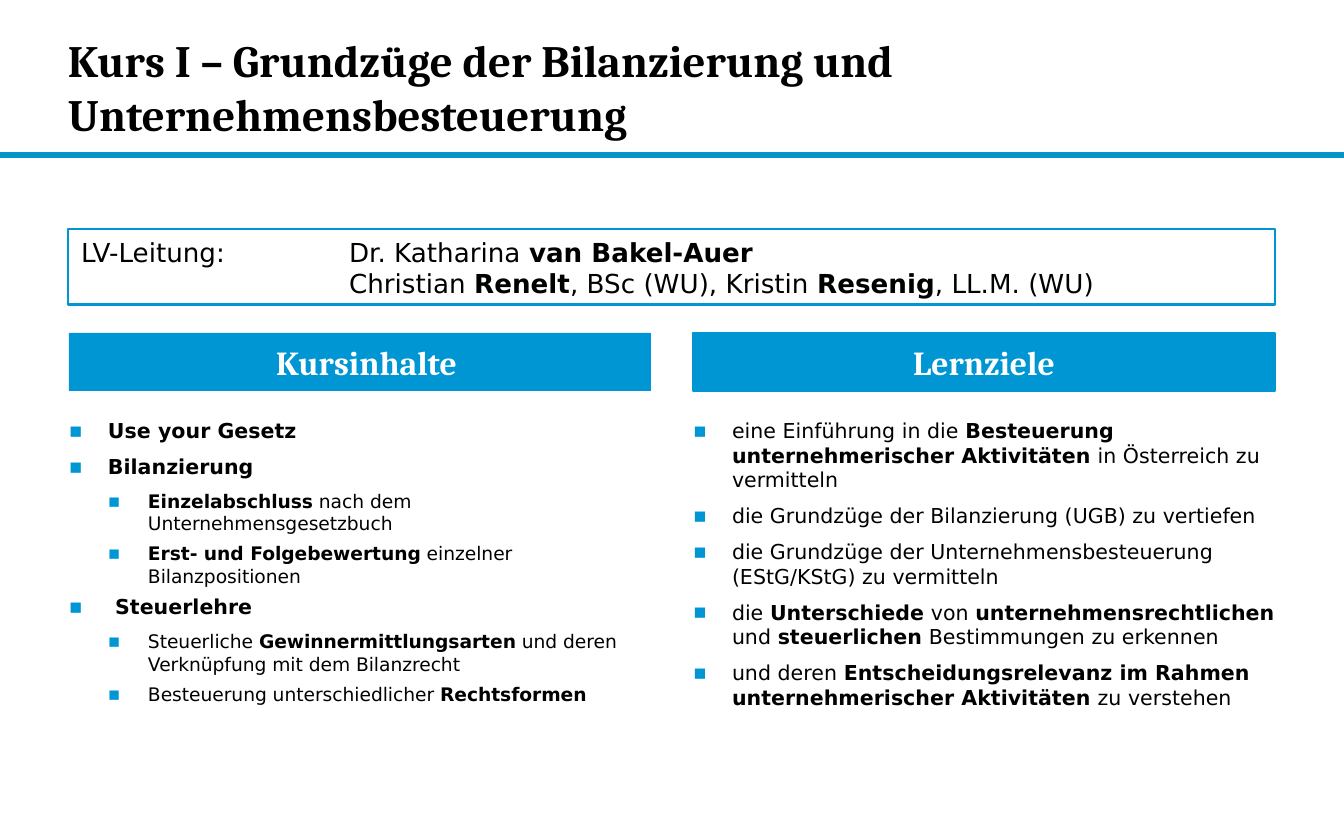
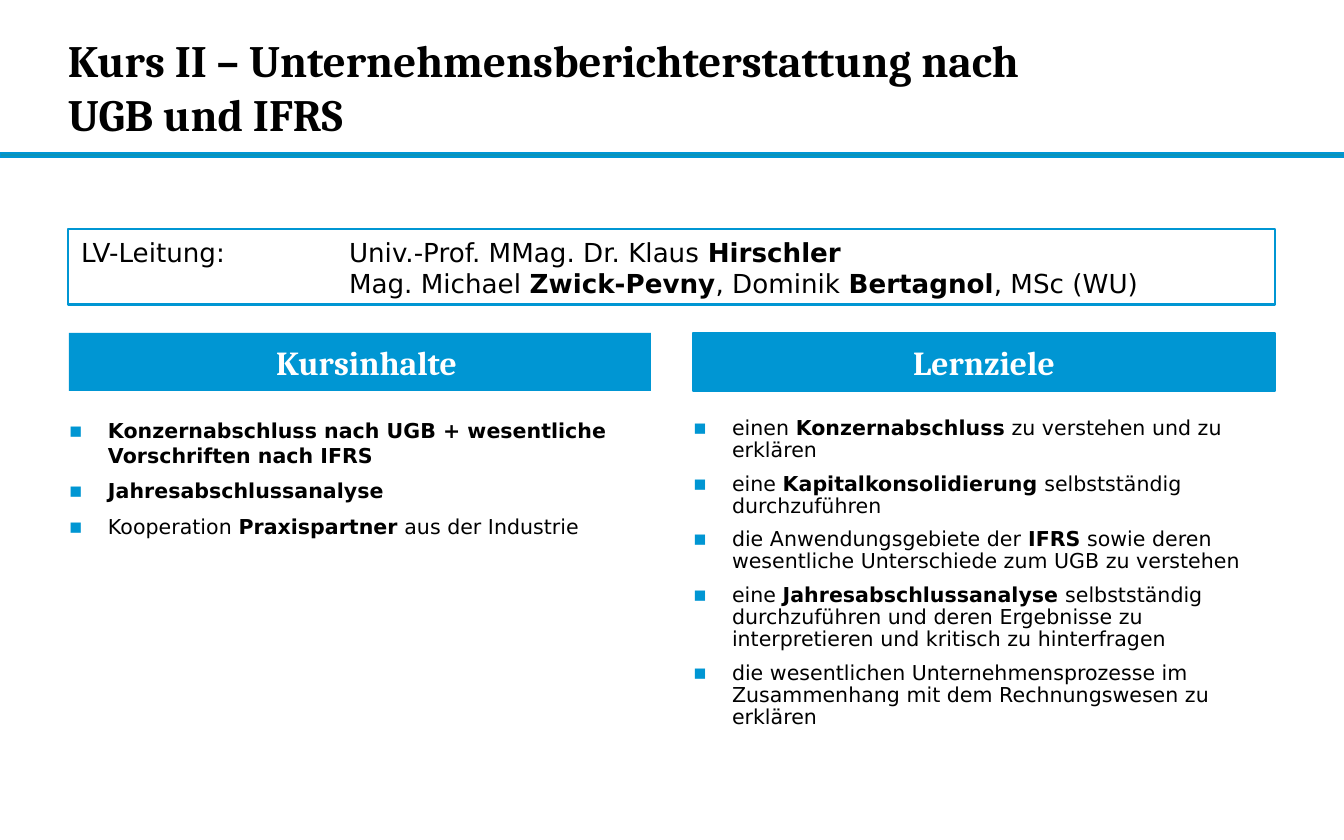
from dataclasses import dataclass

from lxml import etree
from pptx import Presentation
from pptx import util as u
from pptx.dml.color import RGBColor
from pptx.enum import shapes, text
from pptx.oxml.ns import qn

EMU_PER_PX = 914400 / 134.4


def px(length: int) -> u.Emu:
    return u.Emu(round(length * EMU_PER_PX))


@dataclass(frozen=True)
class Theme:
    accent: str = "0096D3"
    rule: str = "0C94B7"
    ink: str = "000000"
    paper: str = "FFFFFF"
    serif: str = "Cambria"
    sans: str = "DejaVu Sans"
    title_size: int = 24
    heading_size: int = 18
    staff_size: int = 14
    item_sizes: tuple[int, ...] = (11, 10)


THEME = Theme()


@dataclass(frozen=True)
class Area:
    left: int
    top: int
    width: int
    height: int

    def emu(self) -> tuple[u.Emu, ...]:
        return px(self.left), px(self.top), px(self.width), px(self.height)


PAGE = Area(0, 0, 1344, 840)
RULE = Area(0, 153, 1344, 4)
TITLE = Area(68, 20, 1006, 133)
STAFF = Area(68, 229, 1207, 76)
STAFF_NAMES_INDENT = 268
HEADING_TOP, HEADING_HEIGHT = 333, 58
LIST_TOP, LIST_HEIGHT = 411, 325
COLUMN_WIDTH = 582


@dataclass(frozen=True)
class Level:
    margin: int
    hanging: int
    space_after: int


LEVELS = (Level(39, 39, 6), Level(79, 40, 4))


@dataclass(frozen=True)
class Column:
    heading: str
    left: int
    heading_indent: int
    outline: float


CONTENTS = Column("Kursinhalte", 69, 13, 0)
GOALS = Column("Lernziele", 693, 0, 1)


@dataclass(frozen=True)
class Item:
    """A bullet; **double stars** enclose its bold words."""
    words: str
    level: int = 0


@dataclass(frozen=True)
class Course:
    title: str
    staff: tuple[str, str]
    contents: tuple[Item, ...]
    goals: tuple[Item, ...]
    goal_spacing: float = 1.0


COURSES = (
    Course(
        "Kurs I – Grundzüge der Bilanzierung und Unternehmensbesteuerung",
        ("Dr. Katharina **van Bakel-Auer**",
         "Christian **Renelt**, BSc (WU), Kristin **Resenig**, LL.M. (WU)"),
        (Item("**Use your Gesetz**"),
         Item("**Bilanzierung**"),
         Item("**Einzelabschluss** nach dem Unternehmensgesetzbuch", 1),
         Item("**Erst- und Folgebewertung** einzelner Bilanzpositionen", 1),
         Item("** Steuerlehre**"),
         Item("Steuerliche **Gewinnermittlungsarten** und deren "
              "Verknüpfung mit dem Bilanzrecht", 1),
         Item("Besteuerung unterschiedlicher **Rechtsformen**", 1)),
        (Item("eine Einführung in die **Besteuerung unternehmerischer "
              "Aktivitäten** in Österreich zu vermitteln"),
         Item("die Grundzüge der Bilanzierung (UGB) zu vertiefen"),
         Item("die Grundzüge der Unternehmensbesteuerung (EStG/KStG) "
              "zu vermitteln"),
         Item("die **Unterschiede** von **unternehmensrechtlichen** und "
              "**steuerlichen** Bestimmungen zu erkennen"),
         Item("und deren **Entscheidungsrelevanz im Rahmen "
              "unternehmerischer Aktivitäten** zu verstehen")),
    ),
    Course(
        "Kurs II – Unternehmensberichterstattung nach UGB und IFRS",
        ("Univ.-Prof. MMag. Dr. Klaus **Hirschler**",
         "Mag. Michael **Zwick-Pevny**, Dominik **Bertagnol**, MSc (WU)"),
        (Item("**Konzernabschluss nach UGB + wesentliche Vorschriften "
              "nach IFRS**"),
         Item("**Jahresabschlussanalyse**"),
         Item("Kooperation **Praxispartner** aus der Industrie")),
        (Item("einen **Konzernabschluss** zu verstehen und zu erklären"),
         Item("eine **Kapitalkonsolidierung** selbstständig durchzuführen"),
         Item("die Anwendungsgebiete der **IFRS** sowie deren wesentliche "
              "Unterschiede zum UGB zu verstehen"),
         Item("eine **Jahresabschlussanalyse** selbstständig durchzuführen "
              "und deren Ergebnisse zu interpretieren und kritisch zu "
              "hinterfragen"),
         Item("die wesentlichen Unternehmensprozesse im Zusammenhang mit "
              "dem Rechnungswesen zu erklären")),
        goal_spacing=0.9,
    ),
)


def color(value: str) -> RGBColor:
    return RGBColor.from_string(value)


def set_frame(box, side: int, vertical: int, anchor):
    frame = box.text_frame
    frame.word_wrap = True
    frame.margin_left = frame.margin_right = px(side)
    frame.margin_top = frame.margin_bottom = px(vertical)
    frame.vertical_anchor = anchor
    return frame


def set_font(para, name: str, size: int, ink: str, bold: bool = False) -> None:
    font = para.font
    font.name, font.size, font.bold = name, u.Pt(size), bold
    font.color.rgb = color(ink)


def set_indent(para, margin: int, first: int = 0):
    properties = para._p.get_or_add_pPr()
    properties.set("marL", str(px(margin)))
    properties.set("indent", str(px(first)))
    return properties


def add_spans(para, words: str) -> None:
    """Split at the double stars; every second part is bold."""
    for index, part in enumerate(words.split("**")):
        if part:
            span = para.add_run()
            span.text = part
            if index % 2:
                span.font.bold = True


def next_paragraph(frame, index: int):
    return frame.add_paragraph() if index else frame.paragraphs[0]


def add_box(page, area: Area, fill: str, line_width: float = 0):
    box = page.shapes.add_shape(shapes.MSO_SHAPE.RECTANGLE, *area.emu())
    box.shadow.inherit = False
    box.fill.solid()
    box.fill.fore_color.rgb = color(fill)
    if line_width:
        box.line.color.rgb = color(THEME.accent)
        box.line.width = u.Pt(line_width)
    else:
        box.line.fill.background()
    return box


def add_title(page, title: str) -> None:
    add_box(page, RULE, THEME.rule, 1)
    box = page.shapes.add_textbox(*TITLE.emu())
    para = set_frame(box, 0, 0, text.MSO_ANCHOR.MIDDLE).paragraphs[0]
    para.text = title
    set_font(para, THEME.serif, THEME.title_size, THEME.ink, True)


def add_staff(page, staff: tuple[str, str]) -> None:
    box = add_box(page, STAFF, THEME.paper, 1.5)
    frame = set_frame(box, 13, 7, text.MSO_ANCHOR.TOP)
    for index, names in enumerate(staff):
        para = next_paragraph(frame, index)
        para.alignment = text.PP_ALIGN.LEFT
        first = 0 if index else -STAFF_NAMES_INDENT
        properties = set_indent(para, STAFF_NAMES_INDENT, first)
        if index == 0:
            tabs = etree.SubElement(properties, qn("a:tabLst"))
            etree.SubElement(tabs, qn("a:tab"), algn="l",
                             pos=str(px(STAFF_NAMES_INDENT)))
        set_font(para, THEME.sans, THEME.staff_size, THEME.ink)
        add_spans(para, names if index else f"LV-Leitung:\t{names}")


def add_bullet(properties) -> None:
    tint = etree.SubElement(properties, qn("a:buClr"))
    etree.SubElement(tint, qn("a:srgbClr"), val=THEME.accent)
    etree.SubElement(properties, qn("a:buFont"), typeface=THEME.sans)
    etree.SubElement(properties, qn("a:buChar"), char="▪")


def add_column(page, column: Column, items: tuple[Item, ...],
               spacing: float = 1.0) -> None:
    heading_area = Area(column.left, HEADING_TOP, COLUMN_WIDTH, HEADING_HEIGHT)
    heading = add_box(page, heading_area, THEME.accent, column.outline)
    para = set_frame(heading, 0, 7, text.MSO_ANCHOR.MIDDLE).paragraphs[0]
    para.text = column.heading
    para.alignment = text.PP_ALIGN.CENTER
    set_indent(para, column.heading_indent)
    set_font(para, THEME.serif, THEME.heading_size, THEME.paper, True)

    list_area = Area(column.left, LIST_TOP, COLUMN_WIDTH, LIST_HEIGHT)
    box = page.shapes.add_textbox(*list_area.emu())
    frame = set_frame(box, 0, 7, text.MSO_ANCHOR.TOP)
    for index, item in enumerate(items):
        level = LEVELS[item.level]
        para = next_paragraph(frame, index)
        para.level = item.level
        para.line_spacing = spacing
        para.space_after = u.Pt(level.space_after)
        add_bullet(set_indent(para, level.margin, -level.hanging))
        set_font(para, THEME.sans, THEME.item_sizes[item.level], THEME.ink)
        add_spans(para, item.words)


def add_course(deck, course: Course) -> None:
    page = deck.slides.add_slide(deck.slide_layouts[6])
    add_title(page, course.title)
    add_staff(page, course.staff)
    add_column(page, CONTENTS, course.contents)
    add_column(page, GOALS, course.goals, course.goal_spacing)


def main() -> None:
    deck = Presentation()
    deck.slide_width, deck.slide_height = px(PAGE.width), px(PAGE.height)
    for course in COURSES:
        add_course(deck, course)
    deck.save("out.pptx")


if __name__ == "__main__":
    main()
